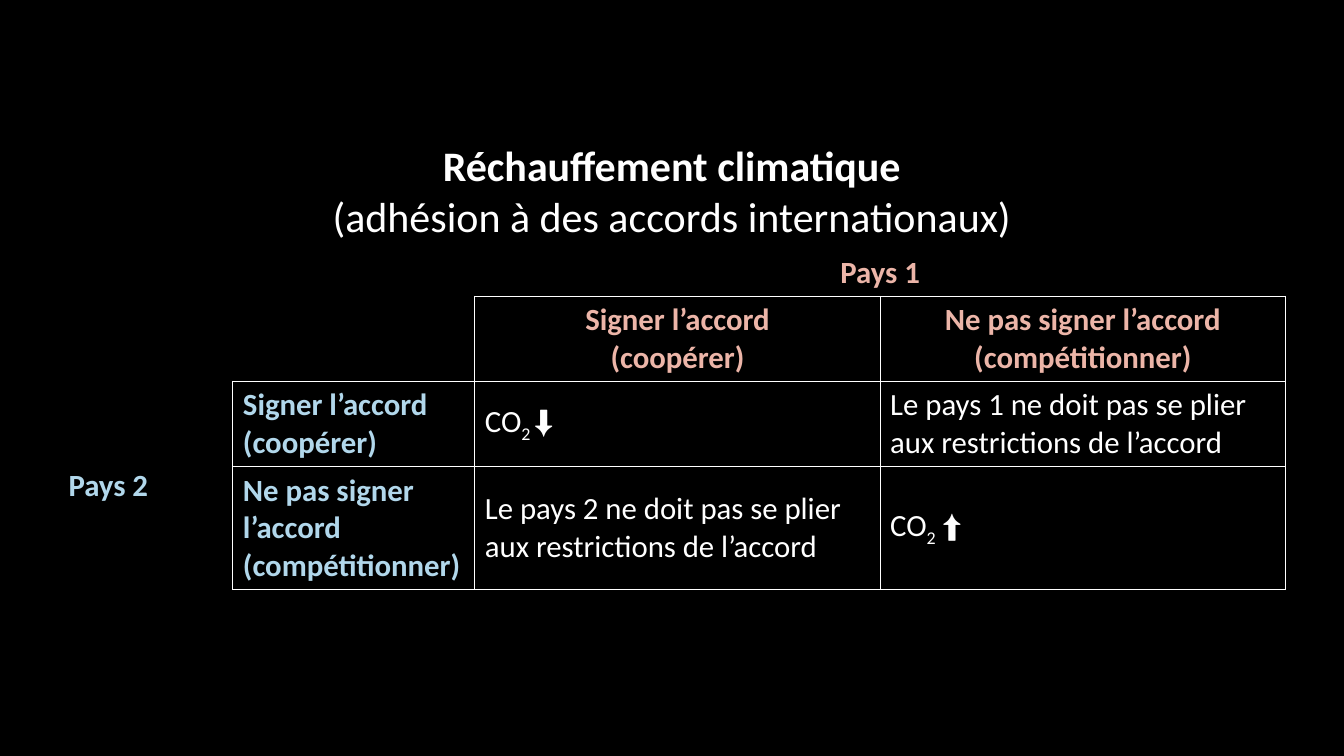
from dataclasses import dataclass

from lxml import etree
from pptx import Presentation
from pptx import util as u
from pptx.dml.color import RGBColor
from pptx.enum import text
from pptx.oxml.ns import qn


@dataclass(frozen=True)
class Theme:
    font: str = "Calibri"
    background: str = "000000"
    plain: str = "FFFFFF"
    country_1: str = "ECB5A8"
    country_2: str = "B1D7EB"
    title_size: int = 30
    body_size: int = 22
    border_width: int = 1


THEME = Theme()

# Content: (row, column) -> paragraphs; a tuple paragraph is (text, subscript, text)
TITLE = {(0, 0): ["Réchauffement climatique"]}
SUBTITLE = {(0, 0): ["(adhésion à des accords internationaux)"]}
COUNTRY_1 = {
    (1, 2): ["Pays 1"],
    (2, 2): ["Signer l’accord", "(coopérer)"],
    (2, 3): ["Ne pas signer l’accord", "(compétitionner)"],
}
COUNTRY_2 = {
    (3, 0): ["Pays 2"],
    (3, 1): ["Signer l’accord (coopérer)"],
    (4, 1): ["Ne pas signer l’accord", "(compétitionner)"],
}
OUTCOMES = {
    (3, 2): [("CO", "2 ", "⬇️")],
    (3, 3): ["Le pays 1 ne doit pas se plier aux restrictions de l’accord"],
    (4, 2): ["Le pays 2 ne doit pas se plier aux restrictions de l’accord"],
    (4, 3): [("CO", "2", " ⬆")],
}

# Layout in inches
LEFT, TOP = 0.58, 1.35
COLUMN_WIDTHS = [1.73, 2.4, 4.02, 4.02]
ROW_HEIGHTS = [1.12, 0.47, 0.84, 0.84, 1.22]
MERGES = [((0, 0), (0, 3)), ((1, 2), (1, 3)), ((3, 0), (4, 0))]
FRAMED = {(2, 2), (2, 3)} | {(r, c) for r in (3, 4) for c in (1, 2, 3)}
SIDES = {"a:lnL": (0, -1), "a:lnR": (0, 1), "a:lnT": (-1, 0), "a:lnB": (1, 0)}


def write(cell, paragraphs, color=THEME.plain, size=THEME.body_size,
          bold=False, align=text.PP_ALIGN.LEFT):
    """Add paragraphs to a cell, after any it already holds."""
    frame = cell.text_frame
    for content in paragraphs:
        paragraph = frame.add_paragraph() if frame.text else frame.paragraphs[0]
        paragraph.alignment = align
        pieces = content if isinstance(content, tuple) else (content,)
        for index, piece in enumerate(pieces):
            run = paragraph.add_run()
            run.text = piece
            run.font.name = THEME.font
            run.font.size = u.Pt(size)
            run.font.bold = bold
            run.font.color.rgb = RGBColor.from_string(color)
            if index == 1:
                run._r.get_or_add_rPr().set("baseline", "-25000")


def draw_borders(cell, row, column):
    """Line every side that touches a framed cell; clear the others."""
    properties = cell._tc.get_or_add_tcPr()
    for tag, (down, across) in SIDES.items():
        line = etree.SubElement(properties, qn(tag))
        if FRAMED & {(row, column), (row + down, column + across)}:
            line.set("w", str(u.Pt(THEME.border_width)))
            fill = etree.SubElement(line, qn("a:solidFill"))
            etree.SubElement(fill, qn("a:srgbClr")).set("val", THEME.plain)
        else:
            etree.SubElement(line, qn("a:noFill"))


def main():
    deck = Presentation()
    deck.slide_width, deck.slide_height = u.Inches(13.33), u.Inches(7.5)
    slide = deck.slides.add_slide(deck.slide_layouts[6])
    slide.background.fill.solid()
    slide.background.fill.fore_color.rgb = RGBColor.from_string(THEME.background)

    # Payoff matrix
    matrix = slide.shapes.add_table(
        len(ROW_HEIGHTS), len(COLUMN_WIDTHS), u.Inches(LEFT), u.Inches(TOP),
        u.Inches(sum(COLUMN_WIDTHS)), u.Inches(sum(ROW_HEIGHTS))).table
    matrix.first_row = matrix.horz_banding = False
    for column, width in zip(matrix.columns, COLUMN_WIDTHS):
        column.width = u.Inches(width)
    for row, height in zip(matrix.rows, ROW_HEIGHTS):
        row.height = u.Inches(height)

    # Cell borders and fills
    for r in range(len(ROW_HEIGHTS)):
        for c in range(len(COLUMN_WIDTHS)):
            cell = matrix.cell(r, c)
            draw_borders(cell, r, c)
            cell.fill.background()
            cell.vertical_anchor = text.MSO_ANCHOR.MIDDLE
    for first, last in MERGES:
        matrix.cell(*first).merge(matrix.cell(*last))

    # Cell text, one format per group
    center = text.PP_ALIGN.CENTER
    groups = [
        (TITLE, dict(size=THEME.title_size, bold=True, align=center)),
        (SUBTITLE, dict(size=THEME.title_size, align=center)),
        (COUNTRY_1, dict(color=THEME.country_1, bold=True, align=center)),
        (COUNTRY_2, dict(color=THEME.country_2, bold=True)),
        (OUTCOMES, {}),
    ]
    for group, style in groups:
        for position, paragraphs in group.items():
            write(matrix.cell(*position), paragraphs, **style)

    deck.save("out.pptx")


if __name__ == "__main__":
    main()
